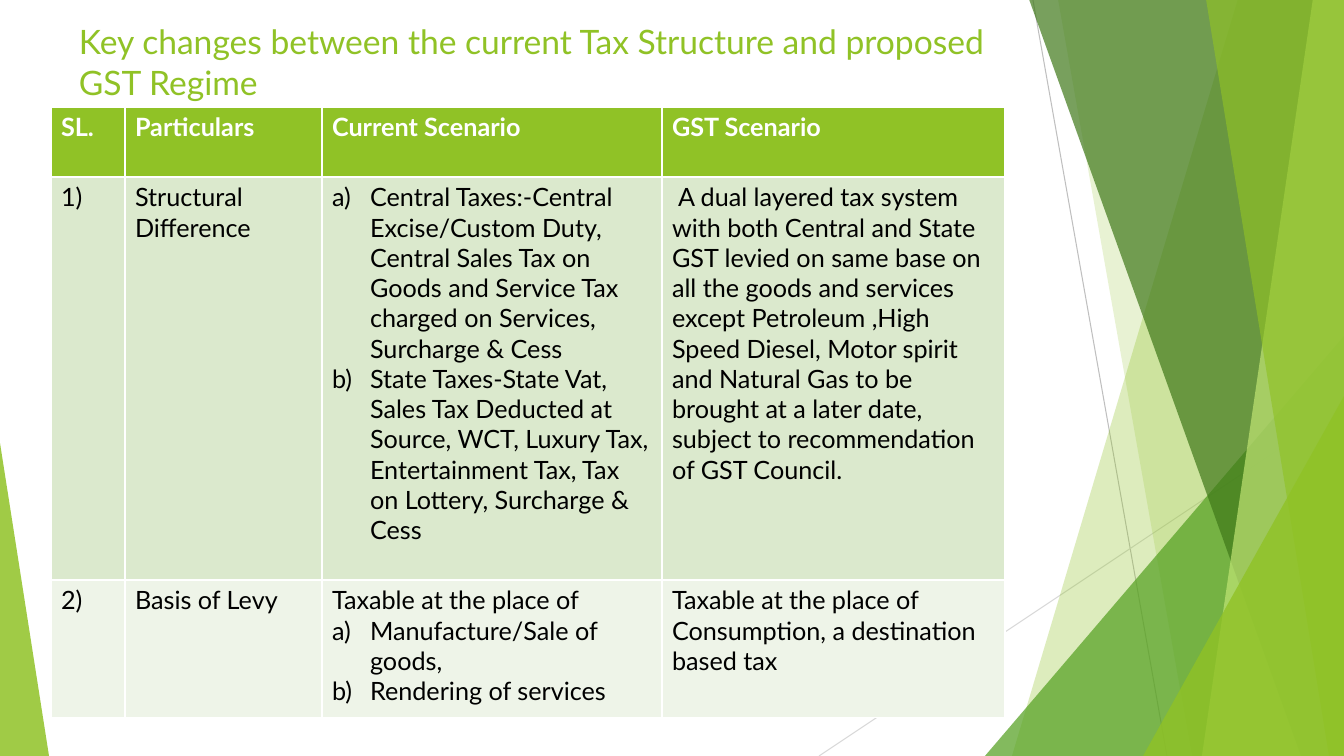
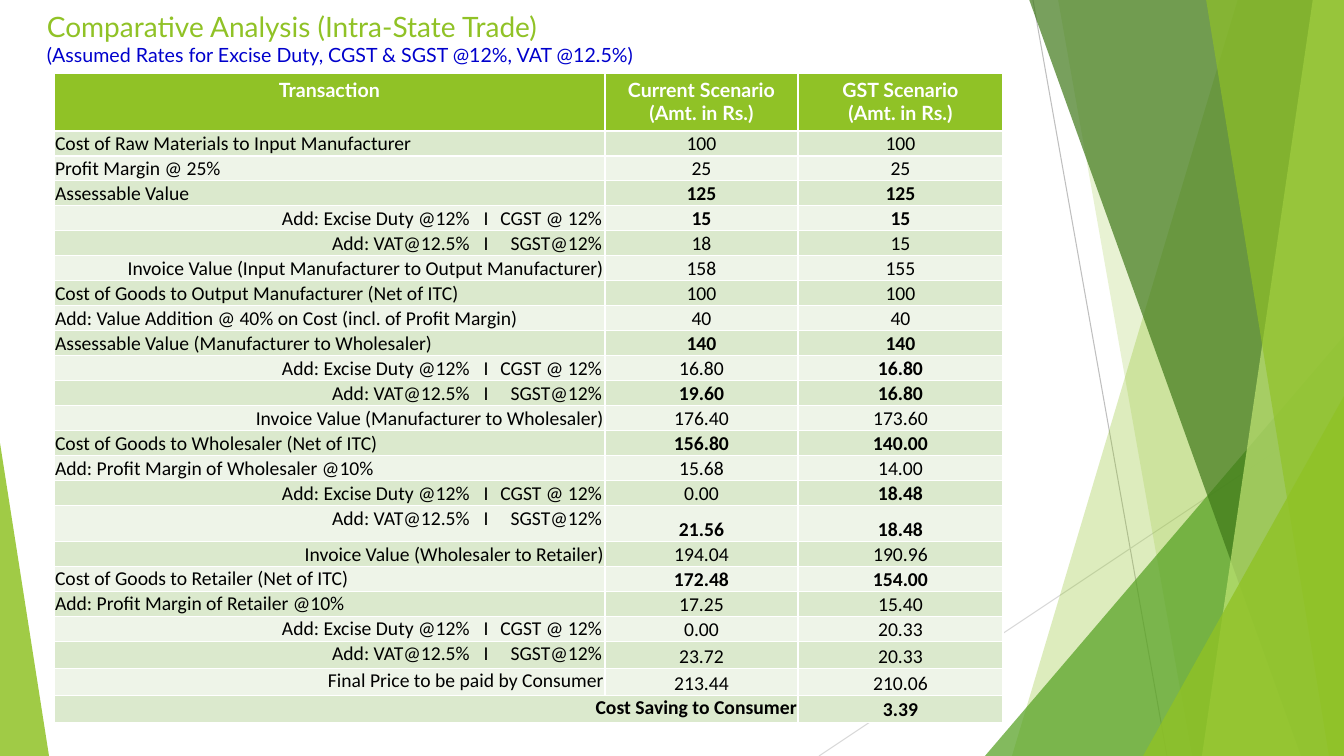
"""Build two slides comparing the current tax structure with the GST regime."""
from lxml.etree import SubElement
from pptx import Presentation
from pptx.dml.color import RGBColor
from pptx.enum.shapes import MSO_CONNECTOR, MSO_SHAPE
from pptx.enum.text import MSO_ANCHOR, PP_ALIGN
from pptx.oxml.ns import qn
from pptx.util import Pt

WIDTH, HEIGHT = 1344, 756
PX = 12192000 / WIDTH
COLOURS = {
    "lime": "90C226", "leaf": "54A021", "forest": "3F7819", "pale": "C0E474",
    "grey": "BFBFBF", "silver": "D9D9D9", "white": "FFFFFF", "black": "000000",
    "blue": "0000CC", "band": "DBE9CD", "light": "EEF4E8",
}
COLOURS = {name: RGBColor.from_string(value) for name, value in COLOURS.items()}
LEFT, CENTER, RIGHT = PP_ALIGN.LEFT, PP_ALIGN.CENTER, PP_ALIGN.RIGHT


def write(para, text, size=18, colour="black", font="Lato", bold=False, align=LEFT):
    para.alignment = align
    span = para.add_run()
    span.text = text
    span.font.size = Pt(size)
    span.font.name = font
    span.font.bold = bold
    span.font.color.rgb = COLOURS[colour]


def add_grid(page, left, top, widths, heights):
    box = [round(value * PX) for value in (left, top, sum(widths), sum(heights))]
    table = page.shapes.add_table(len(heights), len(widths), *box).table
    for column, width in zip(table.columns, widths):
        column.width = round(width * PX)
    for number, (row, height) in enumerate(zip(table.rows, heights)):
        row.height = round(height * PX)
        for cell in row.cells:
            cell.fill.solid()
            fill = "lime" if number == 0 else "band" if number % 2 else "light"
            cell.fill.fore_color.rgb = COLOURS[fill]
    return table


deck = Presentation()
deck.slide_width, deck.slide_height = round(WIDTH * PX), round(HEIGHT * PX)
layout = deck.slide_layouts[6]
for placeholder in list(layout.placeholders):
    placeholder.element.getparent().remove(placeholder.element)
pages = [deck.slides.add_slide(layout) for _ in range(2)]

backdrop = pages[0].shapes.add_group_shape()
for ends, colour in [((1033, 0, 1167, HEIGHT), "grey"), ((WIDTH, 406, 819, HEIGHT), "silver")]:
    line = backdrop.shapes.add_connector(MSO_CONNECTOR.STRAIGHT, *[round(end * PX) for end in ends])
    line.line.width = Pt(0.75)
    line.line.color.rgb = COLOURS[colour]
    SubElement(line.element.spPr, qn("a:effectLst"))

facets = [
    ("panel", (1238, 1012), "lime", 30),
    ("panel", (1058, 1192), "lime", 20),
    ("wedge", (985, 336, 359, 1), "leaf", 72),
    ("panel", (1029, 1301), "forest", 70),
    ("panel", (1313, 1202), "pale", 70),
    ("panel", (1206, 1329), "lime", 65),
    ("wedge", (1143, 396, 201, 1), "lime", 80),
    ("wedge", (0, 443, 49, 0), "lime", 85),
]
for kind, geometry, colour, opacity in facets:
    if kind == "panel":
        upper, lower = geometry
        outline = backdrop.shapes.build_freeform(upper, -1, scale=PX)
        outline.add_line_segments([(WIDTH, -1), (WIDTH, HEIGHT), (lower, HEIGHT)], close=True)
        facet = outline.convert_to_shape()
    else:
        left, top, width, apex = geometry
        box = [round(value * PX) for value in (left, top, width, HEIGHT - top)]
        facet = backdrop.shapes.add_shape(MSO_SHAPE.ISOSCELES_TRIANGLE, *box)
        facet.adjustments[0] = apex
    facet.shadow.inherit = False
    facet.line.fill.background()
    facet.fill.solid()
    facet.fill.fore_color.rgb = COLOURS[colour]
    tint = facet.element.spPr.find(".//" + qn("a:srgbClr"))
    SubElement(tint, qn("a:alpha"), val=str(opacity * 1000))
layout.shapes.element.append(backdrop.element)

titles = [
    ((69, 16, 948, 91), [("Key changes between the current Tax Structure and proposed GST Regime", 24, "lime")]),
    ((37, 4, 981, 68), [
        ("Comparative Analysis (Intra-State Trade)", 20, "lime"),
        ("(Assumed Rates for Excise Duty, CGST & SGST @12%, VAT @12.5%)", 14, "blue"),
    ]),
]
for page, (place, lines) in zip(pages, titles):
    frame = page.shapes.add_textbox(*[round(value * PX) for value in place]).text_frame
    frame.word_wrap = True
    frame.vertical_anchor = MSO_ANCHOR.MIDDLE
    para = frame.paragraphs[0]
    for number, (text, size, colour) in enumerate(lines):
        if number:
            para.add_line_break()
        write(para, text, size=size, colour=colour)

changes = [
    [["SL."], ["Particulars"], ["Current Scenario"], ["GST Scenario"]],
    [
        ["1)"],
        ["Structural Difference"],
        [
            ("Central Taxes:-Central Excise/Custom Duty, Central Sales Tax on Goods and "
             "Service Tax charged on Services, Surcharge & Cess", "item"),
            ("State Taxes-State Vat, Sales Tax Deducted at Source, WCT, Luxury Tax, "
             "Entertainment Tax, Tax on Lottery, Surcharge & Cess", "item"),
        ],
        [("A dual layered tax system with both Central and State GST levied on same base on "
          "all the goods and services except Petroleum ,High Speed Diesel, Motor spirit and "
          "Natural Gas to be brought at a later date, subject to recommendation of GST Council.",
          "indented")],
    ],
    [
        ["2)"],
        ["Basis of Levy"],
        ["Taxable at the place of", ("Manufacture/Sale of goods,", "item"), ("Rendering of services", "item")],
        ["Taxable at the place of Consumption, a destination based tax"],
    ],
]
indents = {"item": (38, -38), "indented": (0, 6)}
table = add_grid(pages[0], 51, 107, [74, 197, 340, 343], [70, 403, 138])
for number, row in enumerate(changes):
    for cell, entries in zip(table.rows[number].cells, row):
        for index, entry in enumerate(entries):
            text, style = (entry, "plain") if isinstance(entry, str) else entry
            frame = cell.text_frame
            para = frame.add_paragraph() if index else frame.paragraphs[0]
            if style in indents:
                margin, indent = indents[style]
                properties = para._p.get_or_add_pPr()
                properties.set("marL", str(round(margin * PX)))
                properties.set("indent", str(round(indent * PX)))
                if style == "item":
                    SubElement(properties, qn("a:buAutoNum"), type="alphaLcParenR")
            write(para, text, colour="black" if number else "white", bold=number == 0)

EXCISE = "\tAdd: Excise Duty @12%\tI\tCGST @ 12%"
VAT = "\tAdd: VAT@12.5%\tI\tSGST@12%"
TAB_STOPS = [(415, "r"), (431, "ctr"), (547, "r")]
BOTH = (1, 2)
trade = [
    ("Cost of Raw Materials to Input Manufacturer", LEFT, "100", "100", ()),
    ("Profit Margin @ 25%", LEFT, "25", "25", ()),
    ("Assessable Value", LEFT, "125", "125", BOTH),
    (EXCISE, LEFT, "15", "15", BOTH),
    (VAT, LEFT, "18", "15", ()),
    ("Invoice Value (Input Manufacturer to Output Manufacturer)", RIGHT, "158", "155", ()),
    ("Cost of Goods to Output Manufacturer (Net of ITC)", LEFT, "100", "100", ()),
    ("Add: Value Addition @ 40% on Cost (incl. of Profit Margin)", LEFT, "40", "40", ()),
    ("Assessable Value (Manufacturer to Wholesaler)", LEFT, "140", "140", BOTH),
    (EXCISE, LEFT, "16.80", "16.80", (2,)),
    (VAT, LEFT, "19.60", "16.80", BOTH),
    ("Invoice Value (Manufacturer to Wholesaler)", RIGHT, "176.40", "173.60", ()),
    ("Cost of Goods to Wholesaler (Net of ITC)", LEFT, "156.80", "140.00", BOTH),
    ("Add: Profit Margin of Wholesaler @10%", LEFT, "15.68", "14.00", ()),
    (EXCISE, LEFT, "0.00", "18.48", (2,)),
    (VAT, LEFT, "21.56", "18.48", BOTH),
    ("Invoice Value (Wholesaler to Retailer)", RIGHT, "194.04", "190.96", ()),
    ("Cost of Goods to Retailer (Net of ITC)", LEFT, "172.48", "154.00", BOTH),
    ("Add: Profit Margin of Retailer @10%", LEFT, "17.25", "15.40", ()),
    (EXCISE, LEFT, "0.00", "20.33", ()),
    (VAT, LEFT, "23.72", "20.33", ()),
    ("Final Price to be paid by Consumer", RIGHT, "213.44", "210.06", ()),
    ("Cost Saving to Consumer", RIGHT, "", "3.39", (0, 2)),
]
heights = [58] + [25] * 15 + [36] + [25] * 4 + [27] * 3
table = add_grid(pages[1], 54, 73, [551, 193, 205], heights)
headings = [["Transaction"], ["Current Scenario", "(Amt. in Rs.)"], ["GST Scenario", "(Amt. in Rs.)"]]
for cell, lines in zip(table.rows[0].cells, headings):
    for index, text in enumerate(lines):
        para = cell.text_frame.add_paragraph() if index else cell.text_frame.paragraphs[0]
        write(para, text, size=14, colour="white", bold=True, align=CENTER)

table.cell(len(trade), 0).merge(table.cell(len(trade), 1))
for number, (label, align, current, proposed, bold_columns) in enumerate(trade, start=1):
    for column, text in enumerate([label, current, proposed]):
        cell = table.cell(number, column)
        if cell.is_spanned:
            continue
        cell.margin_left = cell.margin_right = cell.margin_top = round(PX)
        cell.margin_bottom = 0
        cell.vertical_anchor = MSO_ANCHOR.BOTTOM if column else MSO_ANCHOR.TOP
        para = cell.text_frame.paragraphs[0]
        if "\t" in text:
            stops = SubElement(para._p.get_or_add_pPr(), qn("a:tabLst"))
            for position, kind in TAB_STOPS:
                SubElement(stops, qn("a:tab"), pos=str(round(position * PX)), algn=kind)
        write(para, text, size=14, font="Calibri", bold=column in bold_columns,
              align=CENTER if column else align)

deck.save("out.pptx")
